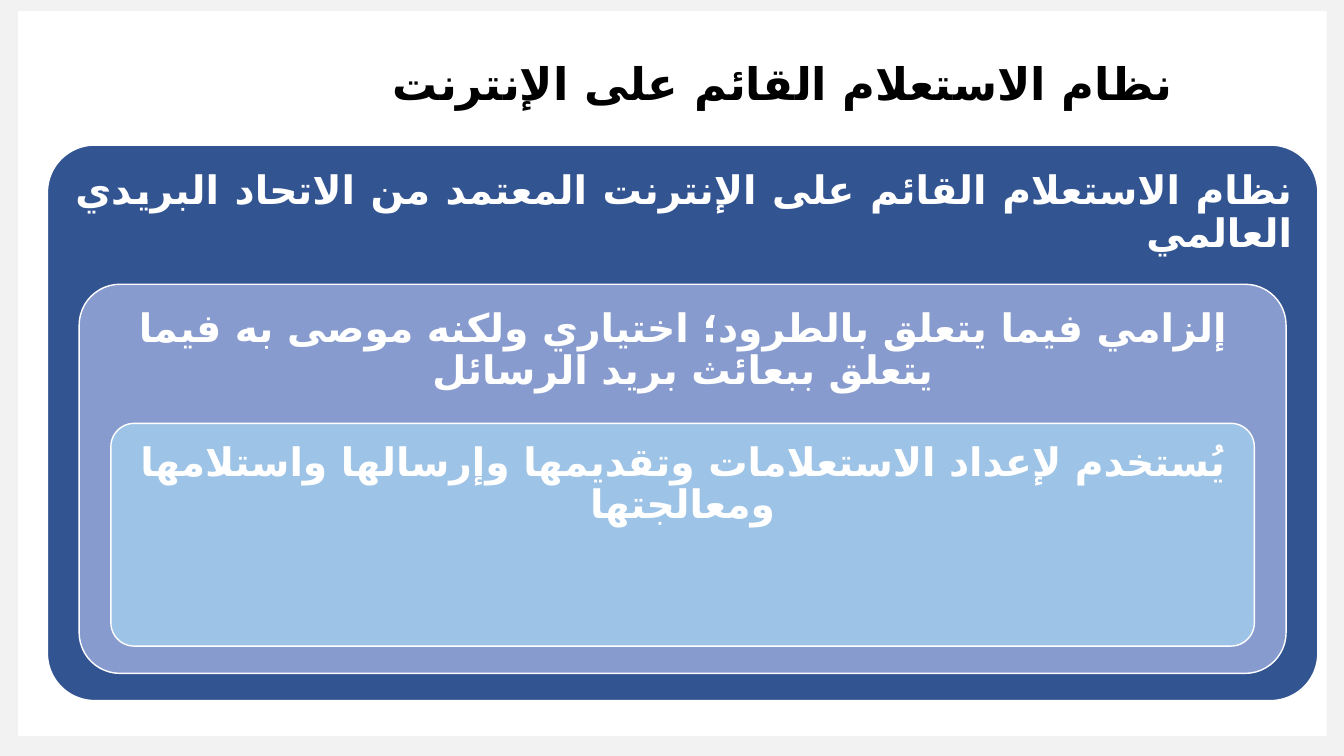
from lxml.etree import SubElement
from pptx import Presentation
from pptx.dml.color import RGBColor
from pptx.enum.shapes import MSO_SHAPE
from pptx.enum.text import MSO_ANCHOR, PP_ALIGN
from pptx.oxml.ns import qn
from pptx.util import Inches, Pt


def color(value):
    return RGBColor.from_string(value)


class ArabicSlide:
    """Hold the style and the page, laid out on 100 columns by 100 rows."""

    font_name = "DejaVu Sans"
    white, black, margin_gray = "FFFFFF", "000000", "F2F2F2"
    title_size, panel_size = Pt(32), Pt(28)
    panel_inset = Inches(0.12)

    def __init__(self, deck):
        self.page = deck.slides.add_slide(deck.slide_layouts[6])
        self.column = deck.slide_width / 100
        self.row = deck.slide_height / 100

    def place(self, left, top, width, height):
        return (round(left * self.column), round(top * self.row),
                round(width * self.column), round(height * self.row))

    def shape(self, kind, area, fill):
        box = self.page.shapes.add_shape(kind, *self.place(*area))
        box.shadow.inherit = False
        box.fill.solid()
        box.fill.fore_color.rgb = color(fill)
        box.line.fill.background()
        return box

    def set_text(self, frame, text, size, ink, align):
        frame.word_wrap = True
        para = frame.paragraphs[0]
        para.text = text
        para.alignment = align
        para.line_spacing = 0.9
        font = para.font
        font.name, font.size, font.bold = self.font_name, size, True
        font.color.rgb = color(ink)
        properties = para._p.get_or_add_pPr()
        properties.set("rtl", "1")
        defaults = properties.find(qn("a:defRPr"))
        SubElement(defaults, qn("a:cs")).set("typeface", self.font_name)

    def backdrop(self):
        self.shape(MSO_SHAPE.RECTANGLE, (0, 0, 100, 100), self.margin_gray)
        self.shape(MSO_SHAPE.RECTANGLE, (1.35, 1.47, 97.37, 95.87), self.white)

    def title(self, text):
        area = self.place(22.66, 7.2, 65.34, 8.4)
        frame = self.page.shapes.add_textbox(*area).text_frame
        frame.vertical_anchor = MSO_ANCHOR.MIDDLE
        self.set_text(frame, text, self.title_size, self.black, PP_ALIGN.RIGHT)

    def panel(self, level, text, fill, rounding, align):
        area = (3.53 + 2.36 * level, 19.2 + 18.4 * level,
                94.52 - 4.72 * level, 73.47 - 22 * level)
        box = self.shape(MSO_SHAPE.ROUNDED_RECTANGLE, area, fill)
        box.adjustments[0] = rounding
        box.line.color.rgb = color(self.white)
        box.line.width = Pt(1)
        frame = box.text_frame
        frame.vertical_anchor = MSO_ANCHOR.TOP
        frame.margin_left = frame.margin_right = self.panel_inset
        frame.margin_top = frame.margin_bottom = self.panel_inset
        self.set_text(frame, text, self.panel_size, self.white, align)


PANELS = [
    ("نظام الاستعلام القائم على الإنترنت المعتمد من الاتحاد البريدي العالمي",
     "325491", 0.085, PP_ALIGN.JUSTIFY),
    ("إلزامي فيما يتعلق بالطرود؛ اختياري ولكنه موصى به فيما يتعلق ببعائث بريد الرسائل",
     "879BCE", 0.105, PP_ALIGN.CENTER),
    ("يُستخدم لإعداد الاستعلامات وتقديمها وإرسالها واستلامها ومعالجتها",
     "9DC3E6", 0.105, PP_ALIGN.CENTER),
]


def main():
    deck = Presentation()
    deck.slide_width, deck.slide_height = Inches(13.33), Inches(7.5)
    slide = ArabicSlide(deck)
    slide.backdrop()
    slide.title("نظام الاستعلام القائم على الإنترنت")
    for level, panel in enumerate(PANELS):
        slide.panel(level, *panel)
    deck.save("out.pptx")


if __name__ == "__main__":
    main()
